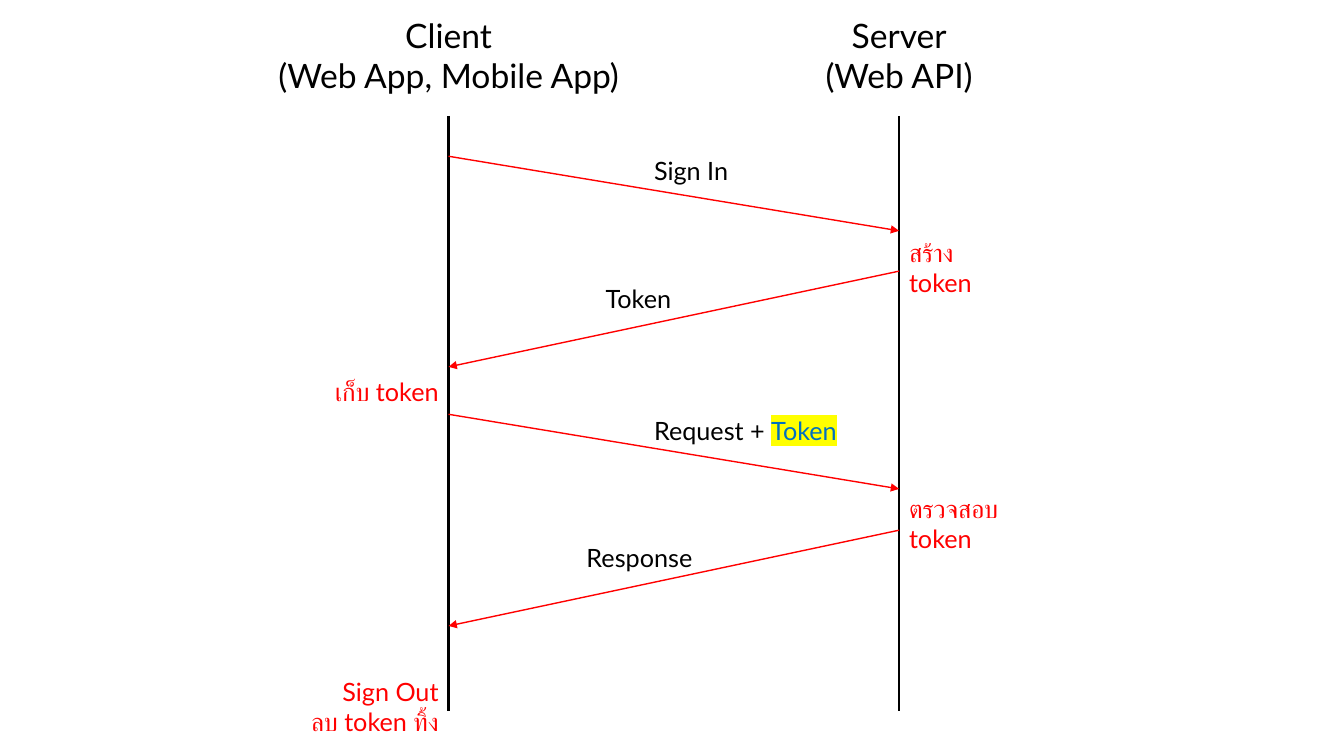
from dataclasses import dataclass

from lxml import etree
from pptx import Presentation
from pptx.dml.color import RGBColor
from pptx.enum.shapes import MSO_CONNECTOR
from pptx.enum.text import MSO_AUTO_SIZE, PP_ALIGN
from pptx.oxml.ns import qn
from pptx.slide import Slide
from pptx.text.text import _Run
from pptx.util import Pt

STRAIGHT = MSO_CONNECTOR.STRAIGHT
FIT_SHAPE = MSO_AUTO_SIZE.SHAPE_TO_FIT_TEXT
LEFT, CENTER, RIGHT = PP_ALIGN.LEFT, PP_ALIGN.CENTER, PP_ALIGN.RIGHT

COLORS = {"ink": "000000", "accent": "FF0000", "token": "0070C0", "marker": "FFFF00"}
FONT = "Lato"

# All lengths are in points.
CLIENT_X, SERVER_X = 320.4, 642.24
LIFELINE_TOP, LIFELINE_BOTTOM = 82.8, 507.6
REQUEST_DROP, REPLY_DROP = 53.28, 68.4
TITLE_TOP, TITLE_HEIGHT = 7.2, 65.52
LABEL_HEIGHT, NOTE_HEIGHT = 28.8, 51.12


@dataclass(frozen=True)
class Participant:
    title: str
    x: float
    title_width: float


@dataclass(frozen=True)
class Message:
    label: str
    start_y: float
    is_request: bool
    label_left: float
    label_top: float
    label_width: float
    marked: str = ""


@dataclass(frozen=True)
class Note:
    text: str
    on_server: bool
    top: float
    width: float


# A vertical tab is a line break, a newline starts a paragraph.
PARTICIPANTS = [
    Participant("Client\v(Web App, Mobile App)", CLIENT_X, 280.08),
    Participant("Server\n(Web API)", SERVER_X, 166.32),
]
MESSAGES = [
    Message("Sign In", 111.6, True, 460.08, 107.28, 90.72),
    Message("Token", 193.68, False, 425.52, 198.72, 90.72),
    Message("Request + ", 295.92, True, 460.08, 293.04, 157.68, marked="Token"),
    Message("Response", 378.72, False, 411.84, 383.76, 104.4),
]
NOTES = [
    Note("สร้าง token", True, 165.6, 93.6),
    Note("ตรวจสอบ token", True, 348.48, 120.24),
    Note("เก็บ token", False, 264.96, 93.6),
    Note("Sign Out\vลบ token ทิ้ง", False, 479.52, 120.24),
]


def format_span(span: _Run, size: float, color: str) -> None:
    span.font.name = FONT
    span.font.size = Pt(size)
    span.font.color.rgb = RGBColor.from_string(COLORS[color])


def highlight(span: _Run, color: str) -> None:
    marker = etree.Element(qn("a:highlight"))
    etree.SubElement(marker, qn("a:srgbClr"), val=COLORS[color])
    span.font.fill._xPr.find(qn("a:solidFill")).addnext(marker)


def add_text(page: Slide, text: str, *, left: float, top: float, width: float,
             height: float, size: float = 18, color: str = "ink",
             align: PP_ALIGN = LEFT, marked: str = "") -> None:
    """Add a text box; the marked words follow the text on a highlight."""
    box = page.shapes.add_textbox(Pt(left), Pt(top), Pt(width), Pt(height))
    frame = box.text_frame
    frame.word_wrap = True
    frame.auto_size = FIT_SHAPE
    frame.text = text
    for para in frame.paragraphs:
        para.alignment = align
        for span in para.runs:
            format_span(span, size, color)
    if marked:
        span = frame.paragraphs[-1].add_run()
        span.text = marked
        format_span(span, size, "token")
        highlight(span, "marker")


def add_line(page: Slide, start: tuple[float, float], end: tuple[float, float], *,
             color: str, width: float, arrow: bool = False) -> None:
    line = page.shapes.add_connector(STRAIGHT, *map(Pt, start + end))
    line.line.color.rgb = RGBColor.from_string(COLORS[color])
    line.line.width = Pt(width)
    properties = line._element.spPr
    if arrow:
        etree.SubElement(properties.find(qn("a:ln")), qn("a:tailEnd"), type="triangle")
    etree.SubElement(properties, qn("a:effectLst"))


def draw_participant(page: Slide, participant: Participant) -> None:
    add_line(page, (participant.x, LIFELINE_TOP), (participant.x, LIFELINE_BOTTOM),
             color="ink", width=1.5)
    add_text(page, participant.title, left=participant.x - participant.title_width / 2,
             top=TITLE_TOP, width=participant.title_width, height=TITLE_HEIGHT,
             size=24, align=CENTER)


def draw_message(page: Slide, message: Message) -> None:
    if message.is_request:
        start_x, end_x, drop = CLIENT_X, SERVER_X, REQUEST_DROP
    else:
        start_x, end_x, drop = SERVER_X, CLIENT_X, REPLY_DROP
    add_line(page, (start_x, message.start_y), (end_x, message.start_y + drop),
             color="accent", width=1, arrow=True)
    add_text(page, message.label, left=message.label_left, top=message.label_top,
             width=message.label_width, height=LABEL_HEIGHT, marked=message.marked)


def draw_note(page: Slide, note: Note) -> None:
    """Set the note against the outer side of its lifeline."""
    left = SERVER_X if note.on_server else CLIENT_X - note.width
    add_text(page, note.text, left=left, top=note.top, width=note.width,
             height=NOTE_HEIGHT, color="accent",
             align=LEFT if note.on_server else RIGHT)


def main() -> None:
    deck = Presentation()
    deck.slide_width, deck.slide_height = Pt(960), Pt(540)
    page = deck.slides.add_slide(deck.slide_layouts[6])
    for participant in PARTICIPANTS:
        draw_participant(page, participant)
    for message in MESSAGES:
        draw_message(page, message)
    for note in NOTES:
        draw_note(page, note)
    deck.save("out.pptx")


if __name__ == "__main__":
    main()
